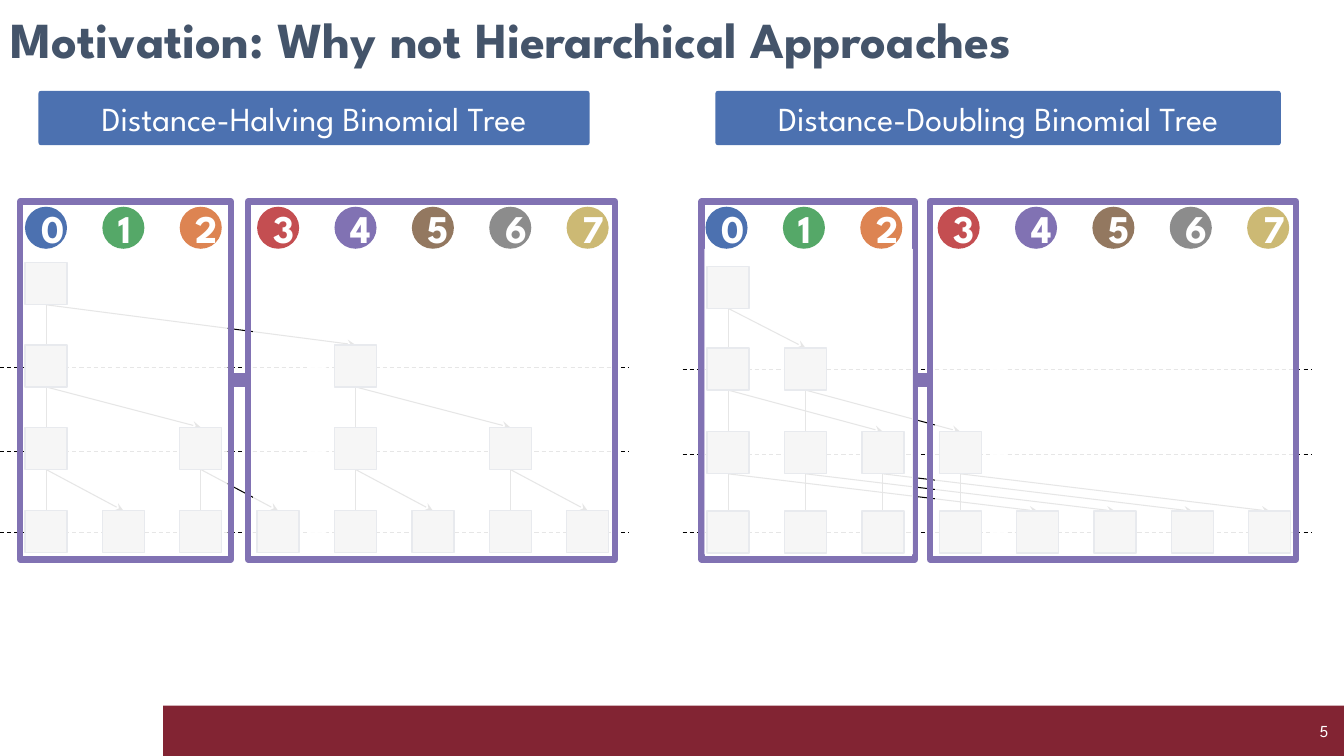
"""Build a slide comparing distance-halving and distance-doubling binomial trees."""
import dataclasses

import pptx
import pptx.dml.color
import pptx.enum.dml
import pptx.enum.shapes
import pptx.enum.text
import pptx.oxml
import pptx.oxml.ns
import pptx.util

Cm = pptx.util.Cm
Pt = pptx.util.Pt
RGBColor = pptx.dml.color.RGBColor
Shape = pptx.enum.shapes.MSO_SHAPE
Align = pptx.enum.text.PP_ALIGN
Anchor = pptx.enum.text.MSO_ANCHOR

FONT = "League Spartan"
WHITE = RGBColor(0xFF, 0xFF, 0xFF)
BLACK = RGBColor(0x00, 0x00, 0x00)
SLATE = RGBColor(0x44, 0x54, 0x6A)
MAROON = RGBColor(0x82, 0x24, 0x33)
GREY = RGBColor(0xA5, 0xA5, 0xA5)
NAVY = RGBColor(0x1E, 0x32, 0x56)
BLUE = RGBColor(0x4C, 0x71, 0xB0)
PURPLE = RGBColor(0x81, 0x72, 0xB3)
RANK_COLORS = (
    BLUE,
    RGBColor(0x55, 0xA8, 0x68),
    RGBColor(0xDD, 0x84, 0x52),
    RGBColor(0xC4, 0x4E, 0x51),
    PURPLE,
    RGBColor(0x93, 0x78, 0x60),
    RGBColor(0x8C, 0x8C, 0x8C),
    RGBColor(0xCC, 0xB9, 0x74),
)
NODE = 1.06
PITCH = 1.95
RANK_TOP = 5.21
FRAME_TOP = 5.08
FRAME_HEIGHT = 9.02
LINK_Y = 9.58


@dataclasses.dataclass
class Tree:
    """Wording, places in centimetres and message steps of one tree."""
    heading: str
    heading_left: float
    heading_width: float
    ranks_left: float
    nodes_left: float
    row_tops: tuple
    dashes_left: float
    dash_heights: tuple
    steps: list
    frames: tuple
    veils: tuple


HALVING = Tree(
    "Distance-Halving Binomial Tree", 0.97, 13.89, 0.63, 0.63,
    (6.62, 8.69, 10.77, 12.87), 0, (9.25, 11.38, 13.41),
    [(range(0, 8, 2 * stride), stride) for stride in (4, 2, 1)],
    ((0.51, 5.31), (6.25, 9.25)),
    ((0.61, 6.3, 5.13, 7.7), (6.38, 6.27, 9.04, 7.7), (7.8, 8.99, 0.43, 5.21)),
)
DOUBLING = Tree(
    "Distance-Doubling Binomial Tree", 18.03, 14.25, 17.78, 17.82,
    (6.71, 8.77, 10.88, 12.88), 17.2, (9.32, 11.46, 13.41),
    [(range(stride), stride) for stride in (1, 2, 4)],
    ((17.68, 5.38), (23.44, 9.22)),
    ((17.75, 6.27, 5.26, 7.7), (23.57, 6.3, 9.02, 7.7),
     (24.97, 6.71, 0.43, 5.21), (24.97, 13.06, 0.43, 1.07)),
)


def add_block(page, kind, place, fill=None, line=None, width=1):
    """Add a preset shape at a place given in centimetres."""
    block = page.shapes.add_shape(kind, *map(Cm, place))
    block.shadow.inherit = False
    if fill is None:
        block.fill.background()
    else:
        block.fill.solid()
        block.fill.fore_color.rgb = fill
    if line is None:
        block.line.fill.background()
    else:
        block.line.color.rgb = line
        block.line.width = Pt(width)
    return block


def write(frame, text, size, color, align, bold=False):
    """Write one formatted, vertically centred paragraph."""
    frame.word_wrap = True
    frame.vertical_anchor = Anchor.MIDDLE
    para = frame.paragraphs[0]
    para.text = text
    para.alignment = align
    para.font.name = FONT
    para.font.size = Pt(size)
    para.font.bold = bold
    para.font.color.rgb = color
    return para


def add_line(page, start, end, color=BLACK, width=0.75, dashed=False, arrow=False):
    """Add a straight line between two points in centimetres."""
    line = page.shapes.add_connector(
        pptx.enum.shapes.MSO_CONNECTOR.STRAIGHT, *map(Cm, (*start, *end)))
    line.line.color.rgb = color
    line.line.width = Pt(width)
    if dashed:
        line.line.dash_style = pptx.enum.dml.MSO_LINE.DASH
    if arrow:
        outline = line.line._get_or_add_ln()
        tail = pptx.oxml.parse_xml(
            f'<a:tailEnd {pptx.oxml.ns.nsdecls("a")} type="stealth"/>')
        outline.append(tail)
    effects = pptx.oxml.parse_xml(f'<a:effectLst {pptx.oxml.ns.nsdecls("a")}/>')
    line._element.spPr.append(effects)


def add_veil(page, place):
    """Add a white rectangle that is ninety percent opaque."""
    veil = add_block(page, Shape.RECTANGLE, place, WHITE)
    color = veil._element.spPr.find(".//" + pptx.oxml.ns.qn("a:srgbClr"))
    alpha = pptx.oxml.parse_xml(
        f'<a:alpha {pptx.oxml.ns.nsdecls("a")} val="90000"/>')
    color.append(alpha)


def add_heading(page, tree):
    """Add the blue heading bar of a tree."""
    place = (tree.heading_left, 2.29, tree.heading_width, 1.37)
    bar = add_block(page, Shape.ROUNDED_RECTANGLE, place, BLUE)
    bar.adjustments[0] = 0.05
    write(bar.text_frame, tree.heading, 24, WHITE, Align.CENTER)


def add_ranks(page, left):
    """Add the row of numbered circles."""
    for rank, color in enumerate(RANK_COLORS):
        place = (left + PITCH * rank, RANK_TOP, NODE, NODE)
        circle = add_block(page, Shape.OVAL, place, color)
        write(circle.text_frame, str(rank), 28, WHITE, Align.CENTER, bold=True)


def add_messages(page, tree):
    """Add the time steps, the edges and the nodes of a tree."""
    def center(rank):
        return tree.nodes_left + PITCH * rank + NODE / 2

    for height in tree.dash_heights:
        add_line(page, (tree.dashes_left, height),
                 (tree.dashes_left + 15.85, height), dashed=True)
    levels = [[0]]
    for row, (senders, stride) in enumerate(tree.steps):
        bottom, top = tree.row_tops[row] + NODE, tree.row_tops[row + 1]
        for rank in senders:
            start = (center(rank), bottom)
            add_line(page, start, (center(rank), top))
            add_line(page, start, (center(rank + stride), top), arrow=True)
        levels.append([*senders, *(rank + stride for rank in senders)])
    for top, ranks in zip(tree.row_tops, levels):
        for rank in ranks:
            place = (tree.nodes_left + PITCH * rank, top, NODE, NODE)
            add_block(page, Shape.RECTANGLE, place, GREY, NAVY)


def add_frame(page, left, width):
    """Add the purple outline around one group of ranks."""
    add_block(page, Shape.RECTANGLE, (left, FRAME_TOP, width, FRAME_HEIGHT),
              line=PURPLE, width=4.5)


def add_tree(page, tree):
    """Add a whole tree with its two linked groups."""
    add_heading(page, tree)
    add_messages(page, tree)
    add_ranks(page, tree.ranks_left)
    first, second = tree.frames
    add_frame(page, *first)
    for place in tree.veils:
        add_veil(page, place)
    add_frame(page, *second)
    add_line(page, (sum(first), LINK_Y), (second[0], LINK_Y), PURPLE, 10)


def add_title(page, text):
    """Place and format the title."""
    title = page.shapes.title
    title.left, title.top, title.width, title.height = map(Cm, (0, 0, 31.55, 2.11))
    title.text_frame.auto_size = pptx.enum.text.MSO_AUTO_SIZE.NONE
    para = write(title.text_frame, text, 36, SLATE, Align.LEFT, bold=True)
    para.line_spacing = 0.9


def add_footer(page, number):
    """Add the maroon band and the page number."""
    add_block(page, Shape.RECTANGLE, (4.11, 17.78, 29.76, 1.27), MAROON)
    box = page.shapes.add_textbox(*map(Cm, (26.11, 17.91, 7.62, 1.02)))
    write(box.text_frame, number, 12, WHITE, Align.RIGHT)


def main():
    """Build and save the deck."""
    deck = pptx.Presentation()
    deck.slide_width, deck.slide_height = Cm(33.87), Cm(19.05)
    page = deck.slides.add_slide(deck.slide_layouts.get_by_name("Title Only"))
    add_title(page, "Motivation: Why not Hierarchical Approaches")
    add_footer(page, "5")
    for tree in (HALVING, DOUBLING):
        add_tree(page, tree)
    deck.save("out.pptx")


if __name__ == "__main__":
    main()
